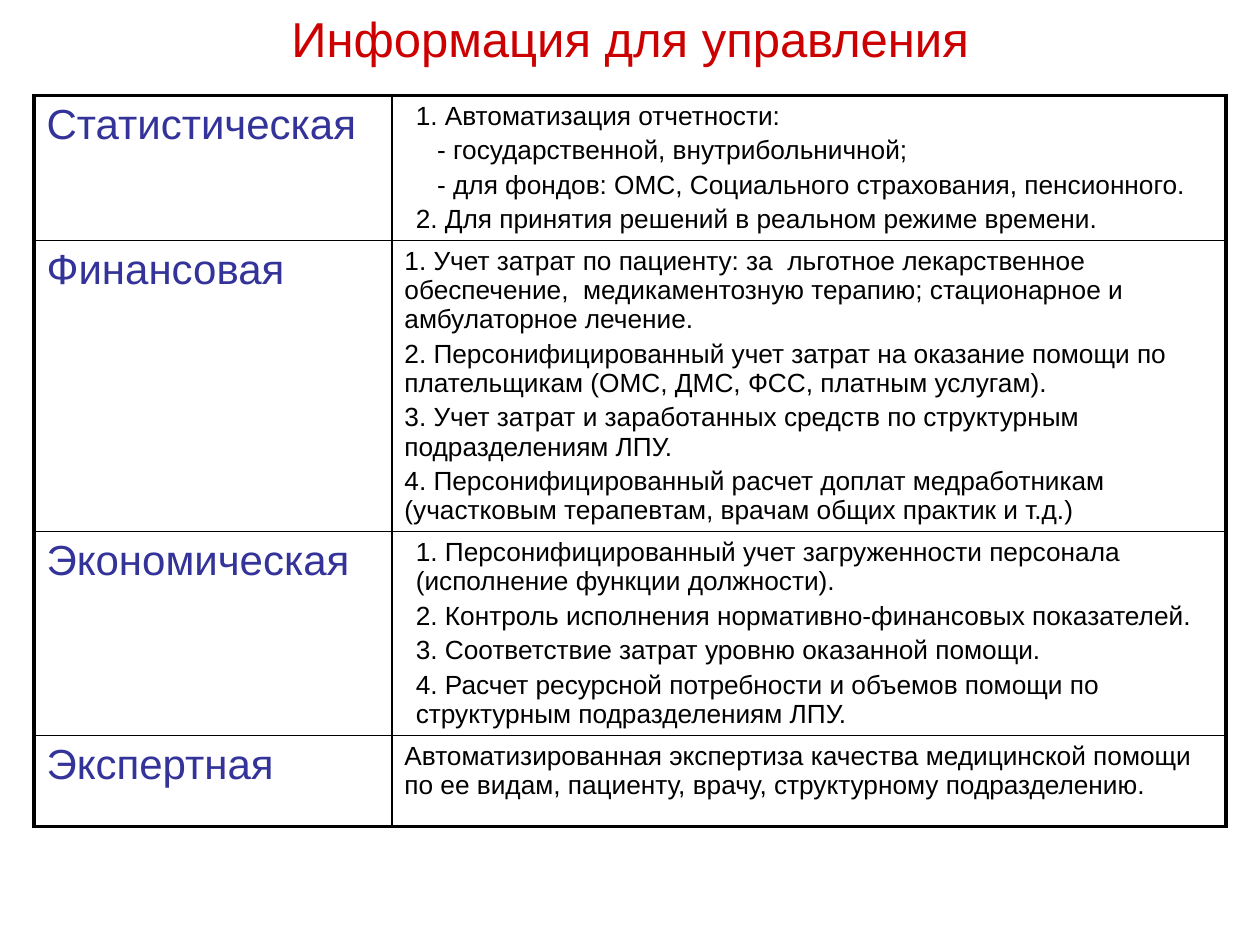
"""Build the slide on information for management."""
from dataclasses import dataclass

import lxml.etree
import pptx
import pptx.dml.color
import pptx.enum.text
import pptx.oxml.ns
import pptx.util

RED = pptx.dml.color.RGBColor(0xCC, 0x00, 0x00)
INDIGO = pptx.dml.color.RGBColor(0x33, 0x33, 0x99)
BLACK = pptx.dml.color.RGBColor(0x00, 0x00, 0x00)
FONT = "Arial"
WIDTH, HEIGHT = pptx.util.Inches(10), pptx.util.Inches(7.5)
TABLE_LEFT, TABLE_TOP = 0.027, 0.101
COLUMN_SHARES = (0.284, 0.662)
INNER, OUTER = 1, 2.25
INDENT, SUB_INDENT = 0.09, 0.26
HEADING_SIZE, BODY_SIZE = 24, 15


@dataclass
class Category:
    name: str
    share: float
    items: tuple[str, ...]
    indent: float = 0


CATEGORIES = (
    Category("Статистическая", 0.152, (
        "1. Автоматизация отчетности:",
        "- государственной, внутрибольничной;",
        "- для фондов: ОМС, Социального страхования, пенсионного.",
        "2. Для принятия решений в реальном режиме времени.",
    ), INDENT),
    Category("Финансовая", 0.308, (
        "1. Учет затрат по пациенту: за  льготное лекарственное обеспечение,  "
        "медикаментозную терапию; стационарное и амбулаторное лечение.",
        "2. Персонифицированный учет затрат на оказание помощи по плательщикам "
        "(ОМС, ДМС, ФСС, платным услугам).",
        "3. Учет затрат и заработанных средств по структурным подразделениям ЛПУ.",
        "4. Персонифицированный расчет доплат медработникам "
        "(участковым терапевтам, врачам общих практик и т.д.)",
    )),
    Category("Экономическая", 0.216, (
        "1. Персонифицированный учет загруженности персонала "
        "(исполнение функции должности).",
        "2. Контроль исполнения нормативно-финансовых показателей.",
        "3. Соответствие затрат уровню оказанной помощи.",
        "4. Расчет ресурсной потребности и объемов помощи по структурным "
        "подразделениям ЛПУ.",
    ), INDENT),
    Category("Экспертная", 0.096, (
        "Автоматизированная экспертиза качества медицинской помощи по ее видам, "
        "пациенту, врачу, структурному подразделению.",
    )),
)


def set_font(p, size: float, color: pptx.dml.color.RGBColor) -> None:
    """Set the font of one paragraph."""
    p.font.name = FONT
    p.font.size = pptx.util.Pt(size)
    p.font.color.rgb = color


def set_borders(cell, row: int, col: int) -> None:
    """Draw thick borders on the table's edge and thin ones inside."""
    last = len(CATEGORIES) - 1
    edges = {"lnL": col == 0, "lnR": col == 1, "lnT": row == 0, "lnB": row == last}
    tc_pr = cell._tc.get_or_add_tcPr()
    for i, (tag, outer) in enumerate(edges.items()):
        ln = lxml.etree.Element(pptx.oxml.ns.qn(f"a:{tag}"))
        ln.set("w", str(int(pptx.util.Pt(OUTER if outer else INNER))))
        fill = lxml.etree.SubElement(ln, pptx.oxml.ns.qn("a:solidFill"))
        lxml.etree.SubElement(fill, pptx.oxml.ns.qn("a:srgbClr")).set("val", str(BLACK))
        tc_pr.insert(i, ln)


def fill_cell(cell, lines: tuple[str, ...], size: float,
              color: pptx.dml.color.RGBColor, indent: float = 0) -> None:
    """Write the lines of a cell as spaced, indented paragraphs."""
    cell.fill.background()
    tf = cell.text_frame
    for i, line in enumerate(lines):
        p = tf.add_paragraph() if i else tf.paragraphs[0]
        p.text = line
        p.space_before = pptx.util.Pt(size * 0.2)
        set_font(p, size, color)
        left = SUB_INDENT if line.startswith("-") else indent
        p._p.get_or_add_pPr().set("marL", str(int(pptx.util.Inches(left))))


def add_title(s, text: str) -> None:
    """Place and format the title placeholder."""
    sp = s.shapes.title
    sp.left, sp.top, sp.width, sp.height = 0, 0, WIDTH, int(HEIGHT * 0.08)
    tf = sp.text_frame
    tf.text = text
    tf.vertical_anchor = pptx.enum.text.MSO_ANCHOR.MIDDLE
    p = tf.paragraphs[0]
    p.alignment = pptx.enum.text.PP_ALIGN.CENTER
    set_font(p, 28, RED)


def add_categories(s) -> None:
    """Add the table of information categories."""
    table = s.shapes.add_table(
        len(CATEGORIES), len(COLUMN_SHARES),
        int(WIDTH * TABLE_LEFT), int(HEIGHT * TABLE_TOP),
        int(WIDTH * sum(COLUMN_SHARES)),
        int(HEIGHT * sum(c.share for c in CATEGORIES)),
    ).table
    table.first_row = table.horz_banding = False
    for column, share in zip(table.columns, COLUMN_SHARES):
        column.width = int(WIDTH * share)
    for row, category in enumerate(CATEGORIES):
        table.rows[row].height = int(HEIGHT * category.share)
        fill_cell(table.cell(row, 0), (category.name,), HEADING_SIZE, INDIGO)
        fill_cell(table.cell(row, 1), category.items, BODY_SIZE, BLACK, category.indent)
        for col in range(len(COLUMN_SHARES)):
            set_borders(table.cell(row, col), row, col)


def main() -> None:
    """Build and save the presentation."""
    prs = pptx.Presentation()
    prs.slide_width, prs.slide_height = WIDTH, HEIGHT
    s = prs.slides.add_slide(prs.slide_layouts[5])
    add_title(s, "Информация для управления")
    add_categories(s)
    prs.save("out.pptx")


if __name__ == "__main__":
    main()
